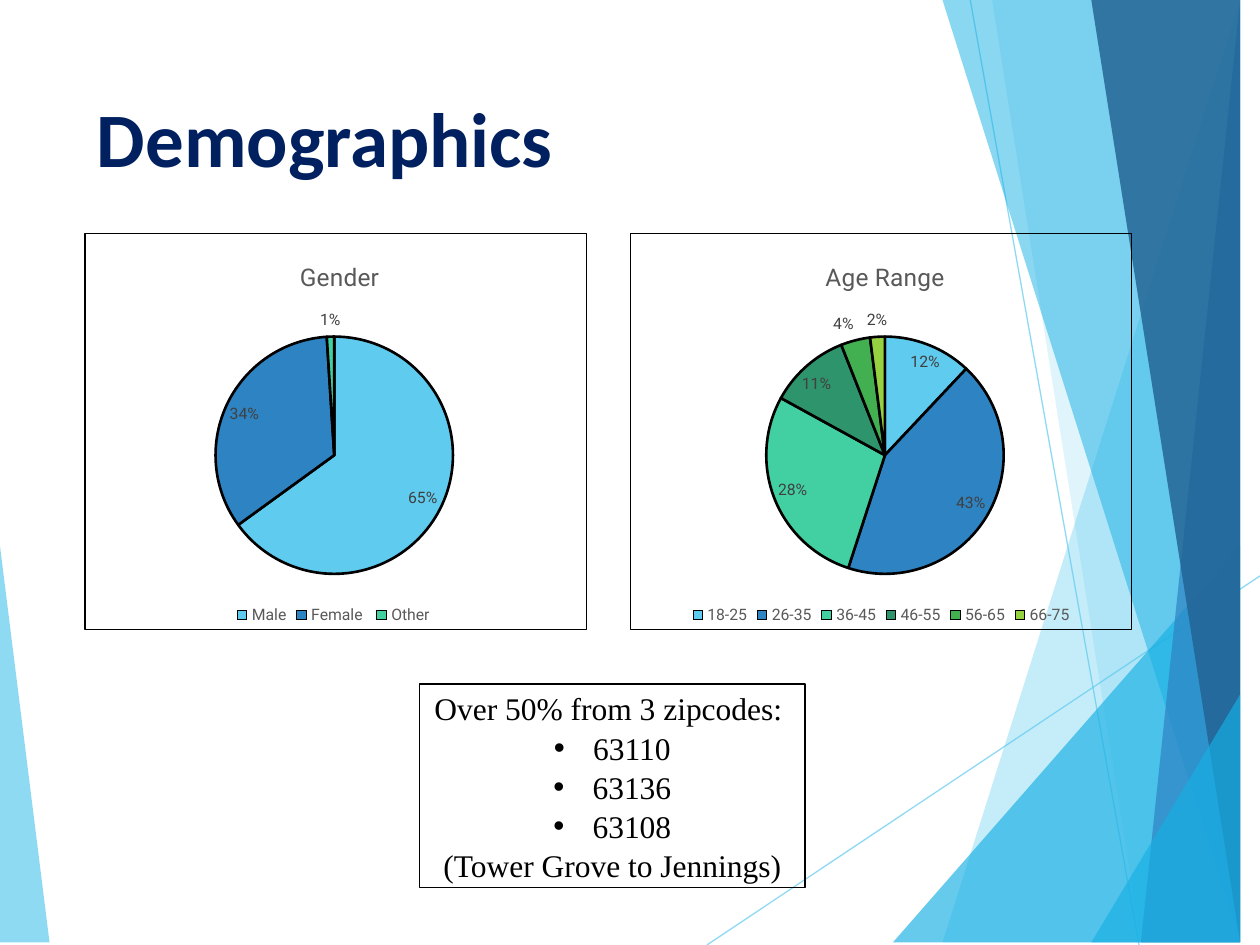
from lxml.etree import SubElement
from pptx import Presentation
from pptx.chart.data import CategoryChartData
from pptx.dml.color import RGBColor
from pptx.enum.chart import XL_CHART_TYPE as ChartType
from pptx.enum.chart import XL_LABEL_POSITION as LabelPosition
from pptx.enum.chart import XL_LEGEND_POSITION as LegendPosition
from pptx.enum.shapes import MSO_CONNECTOR as Connector
from pptx.enum.shapes import MSO_SHAPE as Shape
from pptx.enum.text import MSO_ANCHOR as Anchor
from pptx.enum.text import MSO_AUTO_SIZE as AutoSize
from pptx.enum.text import PP_ALIGN as Align
from pptx.oxml import parse_xml
from pptx.oxml.ns import nsdecls, qn
from pptx.util import Cm, Pt

WIDTH, HEIGHT = 25.4, 19.05
SKY, CYAN, BLUE, NAVY = "5FCBEF", "17B0E4", "2E83C3", "226292"
SLICES = [SKY, BLUE, "42D0A2", "2E946B", "42B051", "96D141"]


def color(value):
    return RGBColor.from_string(value)


def set_font(font, **values):
    values = dict(values)
    font.color.rgb = color(values.pop("color", "000000"))
    for name, value in values.items():
        setattr(font, name, value)


def set_alpha(element, percent):
    for node in element.iter(qn("a:srgbClr")):
        SubElement(node, qn("a:alpha"), val=str(percent * 1000))


def set_layout(element, index, inner=False, **fractions):
    """Place a chart part by fractions (x, y, w, h) of the chart area."""
    for old in element.findall(qn("c:layout")):
        element.remove(old)
    layout = parse_xml(f"<c:layout {nsdecls('c')}><c:manualLayout/></c:layout>")
    manual = layout[0]
    if inner:
        SubElement(manual, qn("c:layoutTarget"), val="inner")
    for axis in "xy":
        SubElement(manual, qn(f"c:{axis}Mode"), val="edge")
    for name, value in fractions.items():
        SubElement(manual, qn(f"c:{name}"), val=str(value))
    element.insert(index, layout)


class SlideBuilder:
    chart_font = "Roboto"
    body_font = "Times New Roman"
    title_font = "Calibri"
    line_width = Pt(0.75)
    slice_width = Pt(1.5)

    def __init__(self, slide):
        self.slide = slide
        self.shapes = slide.shapes

    def outline(self, line, width=None):
        line.color.rgb = color("000000")
        line.width = width or self.line_width

    def polygon(self, points, fill, alpha):
        builder = self.shapes.build_freeform(*points[0], scale=Cm(1))
        builder.add_line_segments(points[1:], close=True)
        shape = builder.convert_to_shape()
        shape.shadow.inherit = False
        shape.fill.solid()
        shape.fill.fore_color.rgb = color(fill)
        shape.line.fill.background()
        set_alpha(shape._element.spPr, alpha)

    def band(self, top, bottom, fill, alpha):
        """Fill from a slanted edge to the right side of the slide."""
        self.polygon([(top, 0), (bottom, HEIGHT), (WIDTH, HEIGHT), (WIDTH, 0)], fill, alpha)

    def corner(self, left, top, fill, alpha):
        """Fill a triangle in the bottom right corner."""
        self.polygon([(left, HEIGHT), (WIDTH, top), (WIDTH, HEIGHT)], fill, alpha)

    def line(self, *ends):
        connector = self.shapes.add_connector(Connector.STRAIGHT, *map(Cm, ends))
        connector.line.color.rgb = color(SKY)
        connector.line.width = self.line_width
        properties = connector._element.spPr
        set_alpha(properties, 70)
        SubElement(properties, qn("a:effectLst"))

    def title(self, text, box):
        title = self.shapes.title
        title.left, title.top, title.width, title.height = map(Cm, box)
        frame = title.text_frame
        frame.text = text
        frame.vertical_anchor = Anchor.TOP
        paragraph = frame.paragraphs[0]
        paragraph.alignment = Align.LEFT
        set_font(paragraph.runs[0].font, name=self.title_font, size=Pt(44),
                 bold=True, color="002060")

    def note(self, lines, box):
        """Add a framed box from (text, is_bullet) lines."""
        shape = self.shapes.add_shape(Shape.RECTANGLE, *map(Cm, box))
        shape.shadow.inherit = False
        shape.fill.background()
        self.outline(shape.line)
        frame = shape.text_frame
        frame.word_wrap = True
        frame.auto_size = AutoSize.SHAPE_TO_FIT_TEXT
        for index, (text, bullet) in enumerate(lines):
            paragraph = frame.add_paragraph() if index else frame.paragraphs[0]
            paragraph.alignment = Align.CENTER
            paragraph.line_spacing = 1.04
            run = paragraph.add_run()
            run.text = text
            set_font(run.font, name=self.body_font, size=Pt(18))
            if bullet:
                properties = paragraph._p.get_or_add_pPr()
                indent = Cm(0.79)
                properties.set("marL", str(indent))
                properties.set("indent", str(-indent))
                SubElement(properties, qn("a:buFont"), typeface="Arial")
                SubElement(properties, qn("a:buChar"), char="•")

    def pie(self, title, values, box, title_x, pie_x, number_format=None):
        """Add a pie chart; labels show percentages unless a number format is given."""
        data = CategoryChartData()
        data.categories = list(values)
        data.add_series("Series 1", list(values.values()))
        chart = self.shapes.add_chart(ChartType.PIE, *map(Cm, box), data).chart
        set_font(chart.font, name=self.chart_font, size=Pt(10))

        chart.has_title = True
        frame = chart.chart_title.text_frame
        frame.text = title
        set_font(frame.paragraphs[0].runs[0].font, name=self.chart_font, size=Pt(14),
                 bold=False, color="595959")
        set_layout(chart.chart_title._element, 1, x=title_x, y=0.055)

        chart.has_legend = True
        chart.legend.position = LegendPosition.BOTTOM
        chart.legend.include_in_layout = False
        set_font(chart.legend.font, name=self.chart_font, size=Pt(9), color="595959")

        plot = chart.plots[0]
        plot.vary_by_categories = True
        series = plot.series[0]
        self.outline(series.format.line)
        for index, fill in enumerate(SLICES[:len(values)]):
            point = series.points[index].format
            point.fill.solid()
            point.fill.fore_color.rgb = color(fill)
            self.outline(point.line, self.slice_width)

        labels = series.data_labels
        labels.show_value = number_format is not None
        labels.show_percentage = number_format is None
        labels.number_format = number_format or "0%"
        labels.number_format_is_linked = False
        labels.position = LabelPosition.BEST_FIT
        set_font(labels.font, name=self.chart_font, size=Pt(9), color="404040")

        space = chart._chartSpace
        set_layout(space.chart.plotArea, 0, inner=True, x=pie_x, y=0.26, w=0.475, h=0.6)
        space.chart.addnext(parse_xml(
            f"<c:spPr {nsdecls('c', 'a')}><a:noFill/><a:ln w='{self.line_width}'>"
            "<a:solidFill><a:srgbClr val='000000'/></a:solidFill></a:ln></c:spPr>"))


def main():
    presentation = Presentation()
    presentation.slide_width, presentation.slide_height = Cm(WIDTH), Cm(HEIGHT)
    builder = SlideBuilder(presentation.slides.add_slide(presentation.slide_layouts[5]))

    builder.polygon([(0, 11.15), (1.24, HEIGHT), (0, HEIGHT)], SKY, 70)
    builder.line(14.25, HEIGHT, WIDTH, 11.61)
    builder.line(19.56, 0, 22.96, HEIGHT)
    builder.band(24.77, 19.15, SKY, 36)
    builder.band(20.02, 23.34, SKY, 20)
    builder.corner(18.44, 10.9, CYAN, 66)
    builder.band(19.48, 24.64, CYAN, 50)
    builder.band(24.92, 23.04, BLUE, 70)
    builder.band(22.48, 25.1, NAVY, 82)
    builder.corner(22.4, 13.59, CYAN, 66)

    builder.title("Demographics", (1.7, 1.7, 17.63, 3.66))
    chart_top, chart_width, chart_height = 4.7, 10.13, 8
    builder.pie("Gender", {"Male": 0.65, "Female ": 0.34, "Other ": 0.01},
                (1.7, chart_top, chart_width, chart_height), 0.42, 0.26, "0%")
    builder.note([("Over 50% from 3 zipcodes: ", False), ("63110", True), ("63136", True),
                  ("63108", True), ("(Tower Grove to Jennings)", False)],
                 (8.46, 13.79, 7.77, 4.11))
    ages = {"18-25": 12, "26-35": 43, "36-45": 28, "46-55": 11, "56-65": 4, "66-75": 2}
    builder.pie("Age Range", ages, (12.7, chart_top, chart_width, chart_height), 0.38, 0.27)
    presentation.save("out.pptx")


if __name__ == "__main__":
    main()
